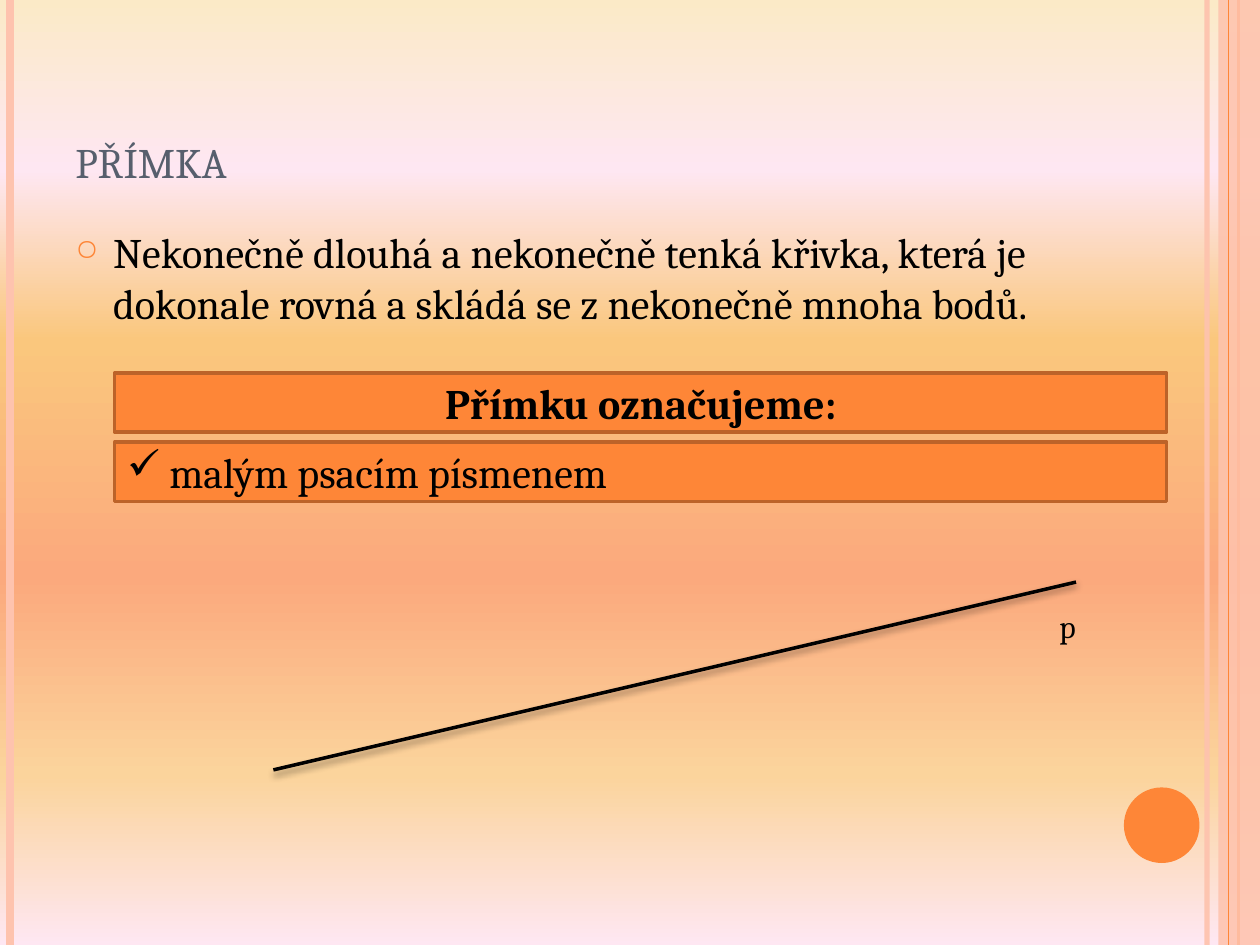
from lxml.etree import SubElement as Sub
from pptx import Presentation
from pptx.dml.color import RGBColor as RGB
from pptx.enum.shapes import MSO_CONNECTOR as LINK, MSO_SHAPE as SHAPE
from pptx.enum.text import MSO_ANCHOR as ANCHOR, PP_ALIGN as ALIGN
from pptx.oxml.ns import qn
from pptx.util import Inches, Pt

THEME = {
    "font": "Cambria", "title": 30, "text": 24, "label": 18,
    "ink": "000000", "heading": "575F6D", "accent": "FE8637",
    "border": "BC6329", "pale": "FEC3AE",
    "sky": [(0, "FBEAC7", 100), (18, "FEE7F2", 100), (36, "FAC77D", 100),
            (61, "FBA97D", 100), (82, "FBD49C", 100), (100, "FEE7F2", 97)],
}

deck = Presentation()
deck.slide_width, deck.slide_height = Inches(10), Inches(7.5)
COL, ROW = deck.slide_width / 100, deck.slide_height / 100
slide = deck.slides.add_slide(deck.slide_layouts[6])
shapes = slide.shapes


def place(x, y, x2, y2):
    return int(x * COL), int(y * ROW), int(x2 * COL), int(y2 * ROW)


def draw_line(ends, color, width, opacity=100):
    stroke = shapes.add_connector(LINK.STRAIGHT, *place(*ends))
    stroke.line.color.rgb = RGB.from_string(color)
    stroke.line.width = Pt(width)
    if opacity < 100:
        tint = stroke.line._ln.find(".//" + qn("a:srgbClr"))
        Sub(tint, qn("a:alpha"), val=str(opacity * 1000))
    return Sub(stroke._element.spPr, qn("a:effectLst"))


sky = slide.background.fill
sky.gradient()
sky.gradient_angle = 270
stops = slide._element.find(".//" + qn("a:gsLst"))
for stop in list(stops):
    stops.remove(stop)
for share, color, opacity in THEME["sky"]:
    stop = Sub(stops, qn("a:gs"), pos=str(share * 1000))
    tint = Sub(stop, qn("a:srgbClr"), val=color)
    if opacity < 100:
        Sub(tint, qn("a:alpha"), val=str(opacity * 1000))

for x, color, width, opacity in [(95.8, "pale", 3, 93), (0.8, "pale", 4.5, 100),
                                 (98.3, "accent", 1.5, 100)]:
    draw_line((x, 0, x, 100), THEME[color], width, opacity)

side_band = shapes.add_shape(SHAPE.RECTANGLE, *place(96.7, 0, 3.3, 100))
draw_line((97.5, 0, 97.5, 100), THEME["accent"], 0.75)
page_dot = shapes.add_shape(SHAPE.OVAL, *place(89.2, 83.33, 6, 8))
for ornament, color in [(side_band, "pale"), (page_dot, "accent")]:
    ornament.shadow.inherit = False
    ornament.fill.solid()
    ornament.fill.fore_color.rgb = RGB.from_string(THEME[color])
    ornament.line.fill.background()
band_tint = side_band._element.spPr.find(".//" + qn("a:srgbClr"))
Sub(band_tint, qn("a:alpha"), val="87000")

heading = shapes.add_textbox(*place(5, 4, 81.7, 16.67))
definition = shapes.add_textbox(*place(5, 23.33, 81.7, 17.2))
notation, lowercase = [
    shapes.add_shape(SHAPE.RECTANGLE, *place(9.1, 39.47 + 7.33 * step, 83.5, 6.27))
    for step in range(2)
]
for bar in (notation, lowercase):
    bar.shadow.inherit = False
    bar.fill.solid()
    bar.fill.fore_color.rgb = RGB.from_string(THEME["accent"])
    bar.line.color.rgb = RGB.from_string(THEME["border"])
    bar.line.width = Pt(2)

effects = draw_line((21.7, 81.47, 85.4, 61.6), THEME["ink"], 2)
shadow = Sub(effects, qn("a:outerShdw"), blurRad=str(Pt(4)), dist=str(Pt(2)),
             dir="5400000", rotWithShape="0")
shade = Sub(shadow, qn("a:srgbClr"), val=THEME["ink"])
Sub(shade, qn("a:alpha"), val="40000")
line_name = shapes.add_textbox(*place(83.1, 63.6, 4.7, 5.33))

for part, words, size, color, anchor, align in [
    (heading, "přímka", "title", "heading", ANCHOR.BOTTOM, ALIGN.LEFT),
    (definition, "Nekonečně dlouhá a nekonečně tenká křivka, která je dokonale rovná "
     "a skládá se z nekonečně mnoha bodů.", "text", "ink", ANCHOR.TOP, ALIGN.LEFT),
    (notation, "Přímku označujeme:", "text", "ink", ANCHOR.MIDDLE, ALIGN.CENTER),
    (lowercase, " malým psacím písmenem", "text", "ink", ANCHOR.MIDDLE, ALIGN.LEFT),
    (line_name, "p", "label", "ink", ANCHOR.TOP, ALIGN.LEFT),
]:
    frame = part.text_frame
    frame.word_wrap = True
    frame.vertical_anchor = anchor
    frame.text = words
    frame.paragraphs[0].alignment = align
    font = frame.paragraphs[0].runs[0].font
    font.name, font.size = THEME["font"], Pt(THEME[size])
    font.color.rgb = RGB.from_string(THEME[color])

heading.text_frame.paragraphs[0].runs[0].font._element.set("cap", "small")
notation.text_frame.paragraphs[0].runs[0].font.bold = True

definition.text_frame.paragraphs[0].space_before = Pt(6)
rules = definition.text_frame.paragraphs[0]._p.get_or_add_pPr()
rules.set("marL", str(Inches(0.3)))
rules.set("indent", str(-Inches(0.3)))
Sub(Sub(rules, qn("a:buClr")), qn("a:srgbClr"), val=THEME["accent"])
Sub(rules, qn("a:buSzPct"), val="70000")
Sub(rules, qn("a:buChar"), char="○")
Sub(lowercase.text_frame.paragraphs[0]._p.get_or_add_pPr(), qn("a:buChar"), char="✓")

deck.save("out.pptx")
